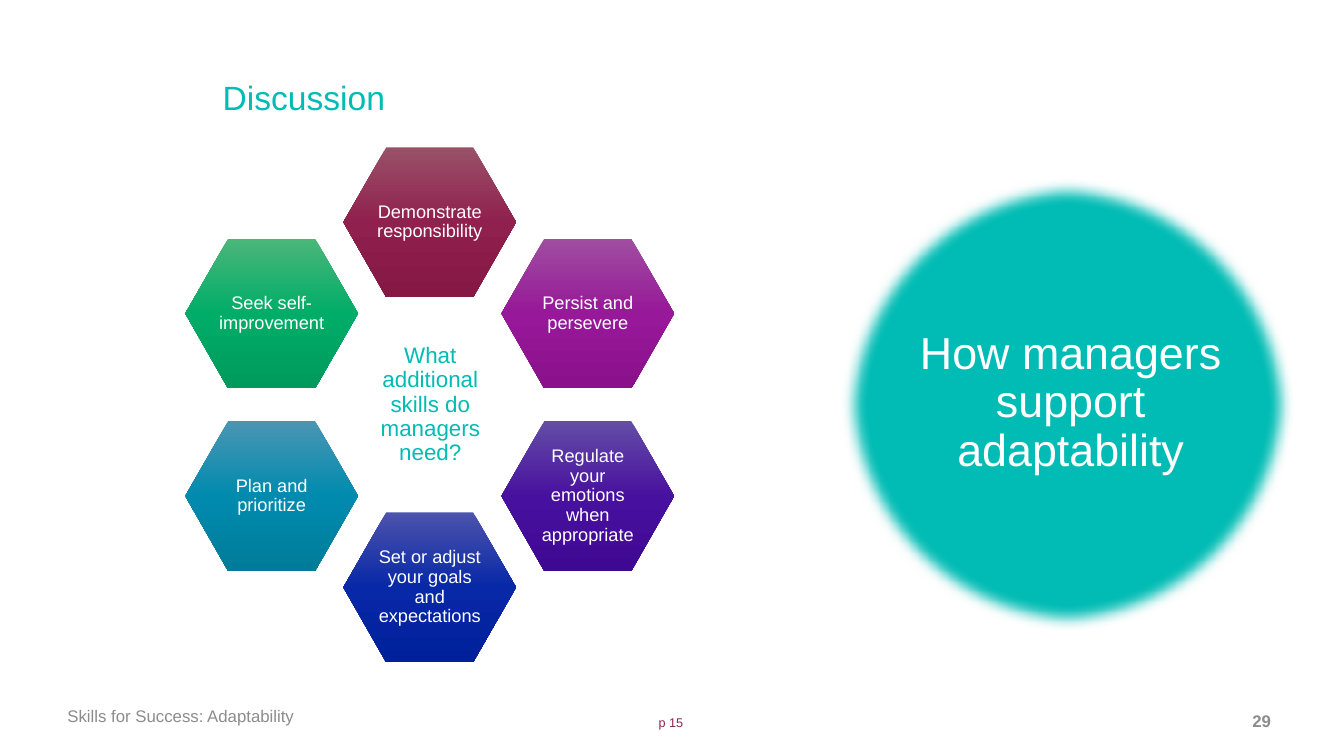
"""Build the slide on how managers support adaptability."""
import copy
import math

import lxml.etree
import pptx
import pptx.dml.color
import pptx.enum.shapes
import pptx.enum.text
import pptx.oxml.ns
import pptx.util

Cm = pptx.util.Cm
Pt = pptx.util.Pt
Kind = pptx.enum.shapes.MSO_SHAPE
Align = pptx.enum.text.PP_ALIGN
Anchor = pptx.enum.text.MSO_ANCHOR


class Theme:
    """Colours, type sizes and font of the slide."""
    font = "Arial"
    teal, white, grey, wine = "00BCB4", "FFFFFF", "8C8C8C", "8B254F"
    title, head, ask, skill, foot, page = 32, 24, 16, 13, 12, 9
    ring = [
        ("995168", "90204E", "851845"),
        ("9F4EA0", "971898", "8B108C"),
        ("644DA6", "48109F", "3F0893"),
        ("4C53AC", "0728A7", "00209B"),
        ("4B95B3", "008BAE", "007C9A"),
        ("4BB67A", "00AD68", "009A5C"),
    ]


SKILLS = [
    "Demonstrate responsibility",
    "Persist and persevere",
    "Regulate your emotions when appropriate",
    "Set or adjust your goals and expectations",
    "Plan and prioritize",
    "Seek self-improvement",
]


def rgb(code):
    """Turn a hex code into a colour."""
    return pptx.dml.color.RGBColor.from_string(code)


class Maker:
    """Draws styled elements on one slide."""

    def __init__(self, slide, theme):
        """Keep the slide and its style."""
        self.slide = slide
        self.theme = theme

    def letter(self, shape, text, size, color, align=Align.LEFT,
               anchor=Anchor.MIDDLE, pad=(0, 0), lead=1.0, bold=False, wrap=True):
        """Set and format the text of a shape."""
        frame = shape.text_frame
        frame.text = text
        frame.word_wrap = wrap
        frame.vertical_anchor = anchor
        frame.margin_left = frame.margin_right = Cm(pad[0])
        frame.margin_top = frame.margin_bottom = Cm(pad[1])
        para = frame.paragraphs[0]
        para.alignment = align
        para.line_spacing = lead
        for run in para.runs:
            run.font.name = self.theme.font
            run.font.size = Pt(size)
            run.font.bold = bold
            run.font.color.rgb = rgb(color)

    def label(self, box, text, size, color, **style):
        """Add a text box."""
        shape = self.slide.shapes.add_textbox(*map(Cm, box))
        self.letter(shape, text, size, color, **style)

    def form(self, kind, box, fill=None):
        """Add a preset shape without a line or shadow."""
        shape = self.slide.shapes.add_shape(kind, *map(Cm, box))
        shape.shadow.inherit = False
        shape.line.fill.background()
        if fill:
            shape.fill.solid()
            shape.fill.fore_color.rgb = rgb(fill)
        return shape

    def disc(self, box, fill, soft):
        """Add a circle with a soft edge."""
        shape = self.form(Kind.OVAL, box, fill)
        shape.line.color.rgb = rgb(self.theme.white)
        shape.line.width = Pt(1)
        qn = pptx.oxml.ns.qn
        effect = shape.element.spPr.find(qn("a:effectLst"))
        lxml.etree.SubElement(effect, qn("a:softEdge"), rad=str(Pt(soft)))

    def hexagon(self, box, text, shades):
        """Add a hexagon shaded from top to bottom."""
        shape = self.form(Kind.HEXAGON, box)
        shape.adjustments[0] = 0.286
        shape.fill.gradient()
        shape.fill.gradient_angle = 270
        stops = shape.element.spPr.find(".//" + pptx.oxml.ns.qn("a:gsLst"))
        stops.append(copy.deepcopy(stops[0]))
        for step, (stop, shade) in enumerate(zip(shape.fill.gradient_stops, shades)):
            stop.position = step / 2
            stop.color.rgb = rgb(shade)
        self.letter(shape, text, self.theme.skill, self.theme.white,
                    align=Align.CENTER, pad=(0.05, 0.05), lead=0.9)

    def ring(self, mid, reach, size, texts):
        """Place hexagons clockwise around a centre, from the top."""
        wide, high = size
        for spot, (text, shades) in enumerate(zip(texts, self.theme.ring)):
            turn = math.tau * spot / len(texts)
            left = mid[0] + reach * math.sin(turn) - wide / 2
            top = mid[1] - reach * math.cos(turn) - high / 2
            self.hexagon((left, top, wide, high), text, shades)


def main():
    """Draw and save the slide."""
    deck = pptx.Presentation()
    deck.slide_width, deck.slide_height = Cm(33.87), Cm(19.05)
    theme = Theme()
    make = Maker(deck.slides.add_slide(deck.slide_layouts[6]), theme)

    make.disc((21.2, 4.5, 11.38, 11.38), theme.teal, 10)
    make.label((21.92, 3.7, 10.13, 12.93), "How managers\vsupport adaptability",
               theme.title, theme.white, align=Align.CENTER, pad=(0.6, 0), lead=0.9)

    make.label((9.07, 8.66, 3.55, 3.08), "What additional skills do managers need?",
               theme.ask, theme.teal, align=Align.CENTER, pad=(0, 0.05), lead=0.9)
    make.ring((10.83, 10.2), 4.6, (4.35, 3.77), SKILLS)

    make.label((1.7, 17.53, 11.43, 1.02), "Skills for Success: Adaptability",
               theme.foot, theme.grey, pad=(0, 0.13))
    make.label((28.5, 17.65, 3.53, 1.02), "29", theme.foot, theme.grey,
               align=Align.RIGHT, pad=(0, 0.13), bold=True)
    make.label((5.61, 1.63, 13.31, 1.63), "Discussion", theme.head, theme.teal)

    page = make.form(Kind.DIAMOND, (16.2, 17.86, 1.42, 0.89), theme.white)
    make.letter(page, "p 15", theme.page, theme.wine, align=Align.CENTER,
                anchor=Anchor.BOTTOM, pad=(0, 0.13), wrap=False)

    deck.save("out.pptx")


if __name__ == "__main__":
    main()
